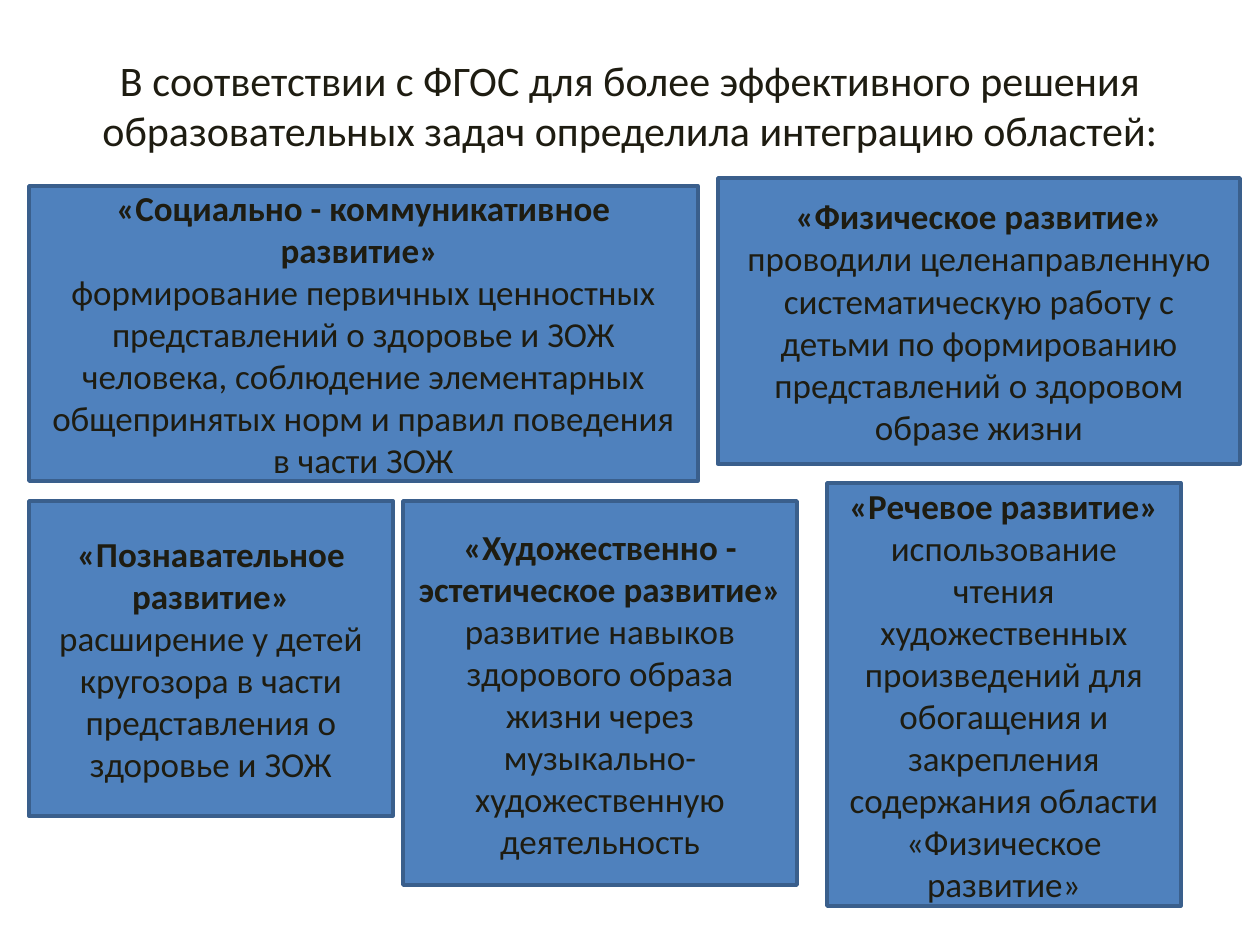
from typing import NamedTuple

from pptx import Presentation
from pptx import util as u
from pptx.dml.color import RGBColor
from pptx.enum import shapes, text

PX = u.Inches(1) / 126
INK = RGBColor(0x1E, 0x1C, 0x11)
BLUE = RGBColor(0x4F, 0x81, 0xBD)
BORDER = RGBColor(0x3A, 0x5F, 0x8C)

TITLE = ("В соответствии с ФГОС для более эффективного решения "
         "образовательных задач определила интеграцию областей:")


class Box(NamedTuple):
    left: int
    top: int
    width: int
    height: int


class Area(NamedTuple):
    box: Box
    heading: str
    body: str
    separate_body: bool = False


AREAS = [
    Area(Box(403, 501, 394, 384), "«Художественно - эстетическое развитие»",
         "развитие навыков здорового образа жизни через "
         "музыкально-художественную деятельность", True),
    Area(Box(718, 178, 522, 286), "«Физическое развитие»",
         "проводили целенаправленную систематическую работу с детьми "
         "по формированию представлений о здоровом образе жизни"),
    Area(Box(827, 483, 354, 423), "«Речевое развитие»",
         "использование чтения художественных произведений для обогащения "
         "и закрепления содержания области «Физическое развитие»"),
    Area(Box(29, 186, 669, 295), "«Социально - коммуникативное развитие»",
         "формирование первичных ценностных представлений о здоровье и ЗОЖ "
         "человека, соблюдение элементарных общепринятых норм и правил "
         "поведения в части ЗОЖ", True),
    Area(Box(29, 501, 364, 315), "«Познавательное развитие»",
         "расширение у детей кругозора в части представления о здоровье и ЗОЖ"),
]


def emu(box: Box) -> list[int]:
    return [round(length * PX) for length in box]


def add_run(paragraph, wording: str, size: int, bold: bool) -> None:
    run = paragraph.add_run()
    run.text = wording
    font_format = {"name": "Calibri", "size": u.Pt(size), "bold": bold}
    for name, value in font_format.items():
        setattr(run.font, name, value)
    run.font.color.rgb = INK
    paragraph.alignment = text.PP_ALIGN.CENTER


def fill_title(title, box: Box) -> None:
    for name, value in zip(Box._fields, emu(box)):
        setattr(title, name, value)
    title.text_frame.vertical_anchor = text.MSO_ANCHOR.MIDDLE
    add_run(title.text_frame.paragraphs[0], TITLE, 24, False)


def add_area(slide, area: Area) -> None:
    shape = slide.shapes.add_shape(shapes.MSO_SHAPE.RECTANGLE, *emu(area.box))
    shape.shadow.inherit = False
    shape.fill.solid()
    shape.fill.fore_color.rgb = BLUE
    shape.line.color.rgb = BORDER
    shape.line.width = u.Pt(2)
    frame = shape.text_frame
    frame.word_wrap = True
    frame.vertical_anchor = text.MSO_ANCHOR.MIDDLE
    paragraph = frame.paragraphs[0]
    add_run(paragraph, area.heading + " ", 20, True)
    if area.separate_body:
        paragraph = frame.add_paragraph()
    add_run(paragraph, area.body, 20, False)


def main() -> None:
    presentation = Presentation()
    presentation.slide_width = u.Inches(10)
    presentation.slide_height = u.Inches(7.5)
    slide = presentation.slides.add_slide(presentation.slide_layouts[5])
    fill_title(slide.shapes.title, Box(42, 32, 1176, 146))
    for area in AREAS:
        add_area(slide, area)
    presentation.save("out.pptx")


if __name__ == "__main__":
    main()
